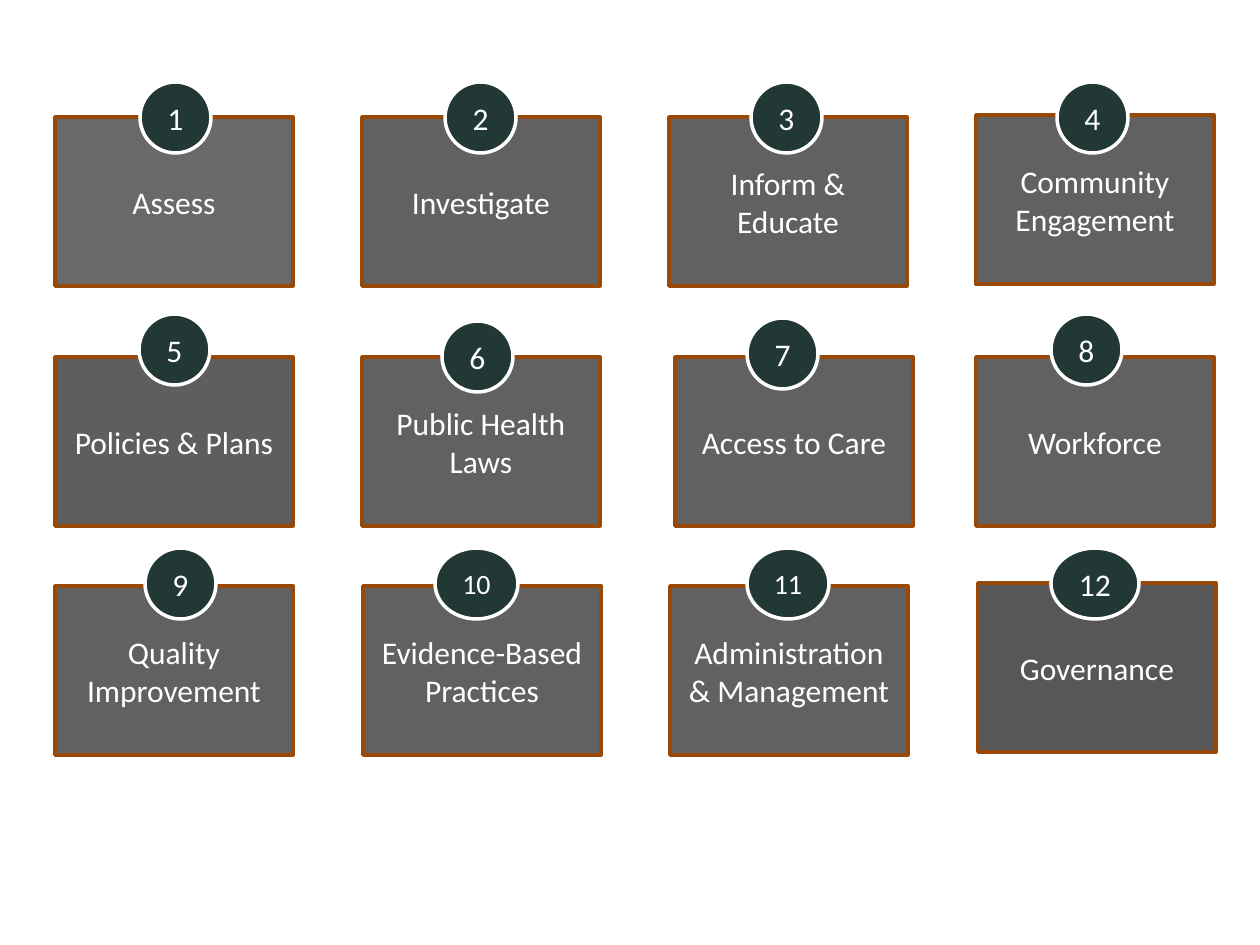
from dataclasses import dataclass

from lxml import etree
from pptx import Presentation
from pptx import util as u
from pptx.dml.color import RGBColor
from pptx.enum import shapes, text
from pptx.oxml.ns import qn
from pptx.shapes.autoshape import Shape
from pptx.slide import Slide

EMU_PER_PX = 914400 / 126
COLUMNS = 4
CARD_LEFT, CARD_PITCH = 55, 307
ROW_TOPS = (117, 357, 586)
CARD_WIDTH, CARD_HEIGHT = 238, 169
BADGE_HEIGHT = 71
BLACK, WHITE, BROWN, GREEN = "000000", "FFFFFF", "984807", "213835"


@dataclass(frozen=True)
class Service:
    """One numbered card; dx and dy shift the card off the grid."""
    name: str
    badge_left: int
    badge_top: int
    badge_width: int = 71
    badge_size: int = 18
    dx: int = 0
    dy: int = 0
    fill: str = BLACK
    opacity: int = 62


SERVICES = (
    Service("Assess", 140, 82, fill="0D0D0D"),
    Service("Investigate", 445, 82),
    Service("Inform & Educate", 751, 82),
    Service("Community Engagement", 1057, 82, dy=-2),
    Service("Policies & Plans", 139, 314, opacity=63),
    Service("Public Health Laws", 442, 321),
    Service("Access to Care", 747, 318, dx=6),
    Service("Workforce", 1051, 314),
    Service("Quality Improvement", 145, 548),
    Service("Evidence-Based Practices", 435, 548, 83, 16, dx=1),
    Service("Administration & Management", 747, 548, 82, 16, dx=1),
    Service("Governance", 1051, 548, 88, dx=2, dy=-3, opacity=66),
)


def px(length: int) -> u.Emu:
    return u.Emu(round(length * EMU_PER_PX))


def color(value: str) -> RGBColor:
    return RGBColor.from_string(value)


def add_label_shape(slide: Slide, kind: shapes.MSO_SHAPE, box: tuple[int, int, int, int],
                    fill: str, line: str, label: str, size: int = 18) -> Shape:
    shape = slide.shapes.add_shape(kind, *map(px, box))
    shape.shadow.inherit = False
    shape.fill.solid()
    shape.fill.fore_color.rgb = color(fill)
    shape.line.color.rgb = color(line)
    shape.line.width = u.Pt(2)
    frame = shape.text_frame
    frame.word_wrap = True
    frame.vertical_anchor = text.MSO_ANCHOR.MIDDLE
    paragraph = frame.paragraphs[0]
    paragraph.alignment = text.PP_ALIGN.CENTER
    run = paragraph.add_run()
    run.text = label
    run.font.name = "Calibri"
    run.font.size = u.Pt(size)
    run.font.color.rgb = color(WHITE)
    return shape


def set_opacity(shape: Shape, percent: int) -> None:
    fill_color = shape.element.spPr.find(qn("a:solidFill")).find(qn("a:srgbClr"))
    etree.SubElement(fill_color, qn("a:alpha")).set("val", str(percent * 1000))


def add_card(slide: Slide, index: int, service: Service) -> None:
    row, column = divmod(index, COLUMNS)
    left = CARD_LEFT + column * CARD_PITCH + service.dx
    top = ROW_TOPS[row] + service.dy
    card = add_label_shape(slide, shapes.MSO_SHAPE.RECTANGLE,
                           (left, top, CARD_WIDTH, CARD_HEIGHT),
                           service.fill, BROWN, service.name)
    set_opacity(card, service.opacity)


def add_badge(slide: Slide, number: int, service: Service) -> None:
    box = (service.badge_left, service.badge_top, service.badge_width, BADGE_HEIGHT)
    add_label_shape(slide, shapes.MSO_SHAPE.OVAL, box, GREEN, WHITE,
                    str(number), service.badge_size)


def main() -> None:
    presentation = Presentation()
    presentation.slide_width, presentation.slide_height = px(1260), px(945)
    slide = presentation.slides.add_slide(presentation.slide_layouts[6])
    for index, service in enumerate(SERVICES):
        add_card(slide, index, service)
    for number, service in enumerate(SERVICES, start=1):
        add_badge(slide, number, service)
    presentation.save("out.pptx")


if __name__ == "__main__":
    main()
